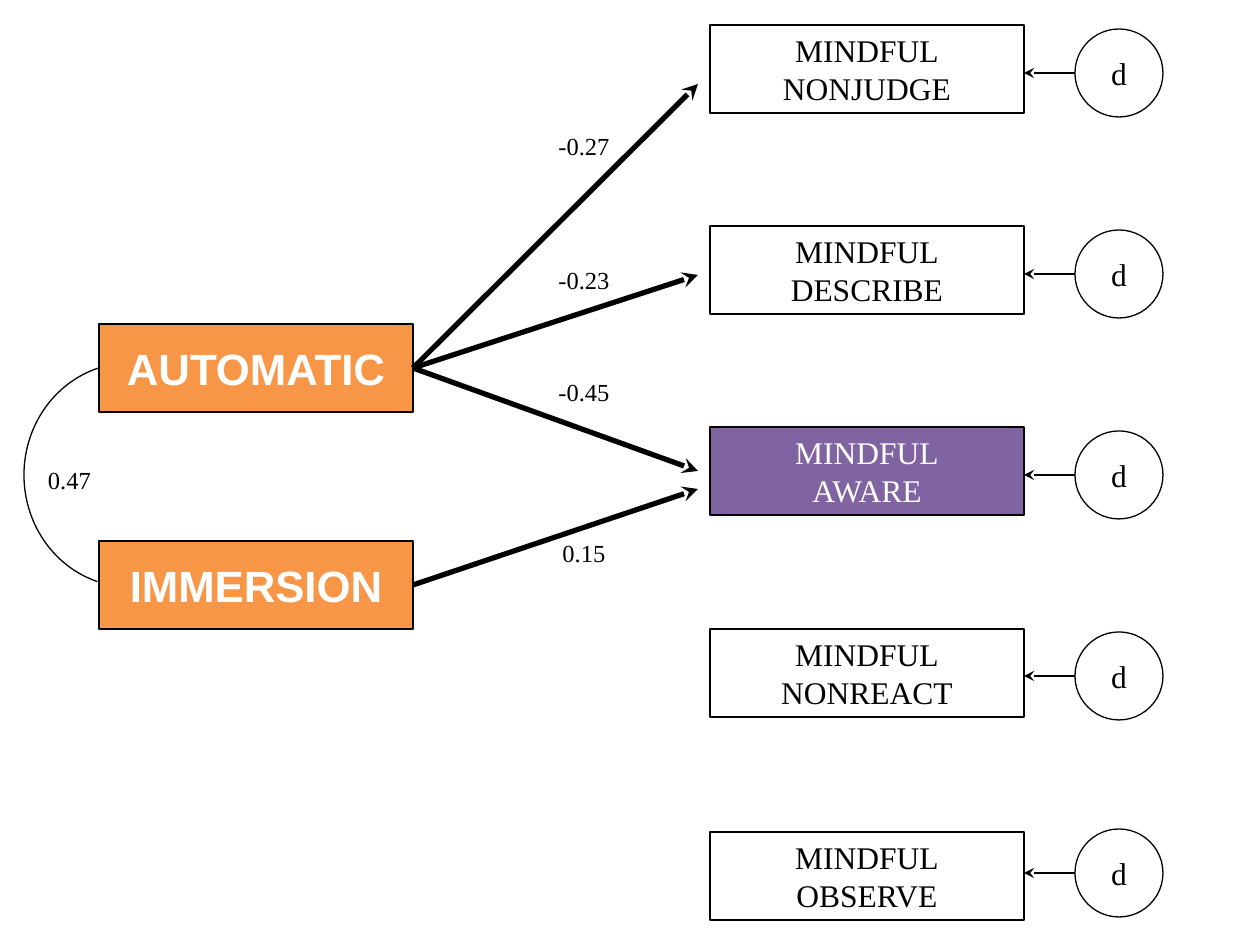
from dataclasses import dataclass

from lxml.etree import SubElement
from pptx import Presentation
from pptx.dml.color import RGBColor
from pptx.enum.shapes import MSO_CONNECTOR, MSO_SHAPE
from pptx.enum.text import MSO_ANCHOR, PP_ALIGN
from pptx.oxml.ns import qn
from pptx.util import Emu, Pt

EMU_PER_PX = 914400 / 126
RIGHT_SIDE = 3


def px(length):
    return Emu(round(length * EMU_PER_PX))


@dataclass(frozen=True)
class Theme:
    black: str = "000000"
    white: str = "FFFFFF"
    orange: str = "F79646"
    purple: str = "8064A2"
    serif: str = "Times New Roman"
    sans: str = "Arial"
    predictor_size: int = 25
    outcome_size: int = 18
    label_size: int = 14
    outline: float = 0.75
    thin: float = 1
    thick: float = 3


class PathDiagram:
    def __init__(self, slide, theme):
        self.slide = slide
        self.theme = theme

    def set_text(self, shape, text, size, color, font, bold=False):
        frame = shape.text_frame
        frame.text = text
        frame.word_wrap = True
        frame.vertical_anchor = MSO_ANCHOR.MIDDLE
        for paragraph in frame.paragraphs:
            paragraph.alignment = PP_ALIGN.CENTER
            for run in paragraph.runs:
                run.font.name = font
                run.font.size = Pt(size)
                run.font.bold = bold
                run.font.color.rgb = RGBColor.from_string(color)

    def outlined(self, kind, left, top, width, height, fill=None):
        shape = self.slide.shapes.add_shape(kind, px(left), px(top), px(width), px(height))
        shape.shadow.inherit = False
        if fill:
            shape.fill.solid()
            shape.fill.fore_color.rgb = RGBColor.from_string(fill)
        else:
            shape.fill.background()
        shape.line.color.rgb = RGBColor.from_string(self.theme.black)
        shape.line.width = Pt(self.theme.outline)
        return shape

    def box(self, left, top, fill):
        return self.outlined(MSO_SHAPE.RECTANGLE, left, top, 314, 88, fill)

    def predictor(self, text, top):
        shape = self.box(99, top, self.theme.orange)
        self.set_text(shape, text, self.theme.predictor_size, self.theme.white, self.theme.sans, True)
        return shape

    def outcome(self, text, top, fill, color):
        shape = self.box(710, top, fill)
        self.set_text(shape, text, self.theme.outcome_size, color, self.theme.serif)

    def disturbance(self, top):
        circle = self.outlined(MSO_SHAPE.OVAL, 1075, top, 88, 88)
        self.set_text(circle, "d", self.theme.outcome_size, self.theme.black, self.theme.serif)
        self.arrow((1075, top + 44), (1024, top + 44), self.theme.thin)

    def arrow(self, start, end, width):
        connector = self.slide.shapes.add_connector(
            MSO_CONNECTOR.STRAIGHT, *(px(value) for value in (*start, *end)))
        connector.line.color.rgb = RGBColor.from_string(self.theme.black)
        connector.line.width = Pt(width)
        properties = connector._element.spPr
        SubElement(properties.find(qn("a:ln")), qn("a:tailEnd"), type="stealth")
        SubElement(properties, qn("a:effectLst"))
        return connector

    def effect(self, predictor, end):
        connector = self.arrow((413, 369), end, self.theme.thick)
        connector.begin_connect(predictor, RIGHT_SIDE)

    def correlation(self, left, top, width, height, start_degrees, end_degrees):
        arc = self.outlined(MSO_SHAPE.ARC, left, top, width, height)
        arc.rotation = 270
        # Angles are stored in 60000ths of a degree, adjustments in 100000ths
        arc.adjustments[0] = start_degrees * 0.6
        arc.adjustments[1] = end_degrees * 0.6

    def label(self, text, left, top, width):
        box = self.slide.shapes.add_textbox(px(left), px(top), px(width), px(88))
        self.set_text(box, text, self.theme.label_size, self.theme.black, self.theme.serif)


def main():
    presentation = Presentation()
    presentation.slide_width, presentation.slide_height = px(1260), px(945)
    theme = Theme()
    diagram = PathDiagram(presentation.slides.add_slide(presentation.slide_layouts[6]), theme)

    # Predictors and their correlation
    automatic = diagram.predictor("AUTOMATIC", 324)
    immersion = diagram.predictor("IMMERSION", 541)
    diagram.correlation(18, 369, 224, 212, 197, 344)
    diagram.label("0.47", 0, 436, 139)

    # Outcomes, each with its disturbance
    plain = (theme.white, theme.black)
    highlighted = (theme.purple, theme.white)
    outcomes = [
        ("NONJUDGE", 25, 29, plain),
        ("DESCRIBE", 226, 230, plain),
        ("AWARE", 427, 431, highlighted),
        ("NONREACT", 629, 632, plain),
        ("OBSERVE", 832, 829, plain),
    ]
    for facet, box_top, circle_top, (fill, color) in outcomes:
        diagram.outcome(f"MINDFUL\n{facet}", box_top, fill, color)
        diagram.disturbance(circle_top)

    # Effects with their coefficients
    effects = [
        (automatic, 84, "-0.27", 102),
        (automatic, 275, "-0.23", 236),
        (automatic, 471, "-0.45", 348),
        (immersion, 489, "0.15", 509),
    ]
    for predictor, end_y, coefficient, label_top in effects:
        diagram.effect(predictor, (698, end_y))
        diagram.label(coefficient, 535, label_top, 98)

    presentation.save("out.pptx")


if __name__ == "__main__":
    main()
